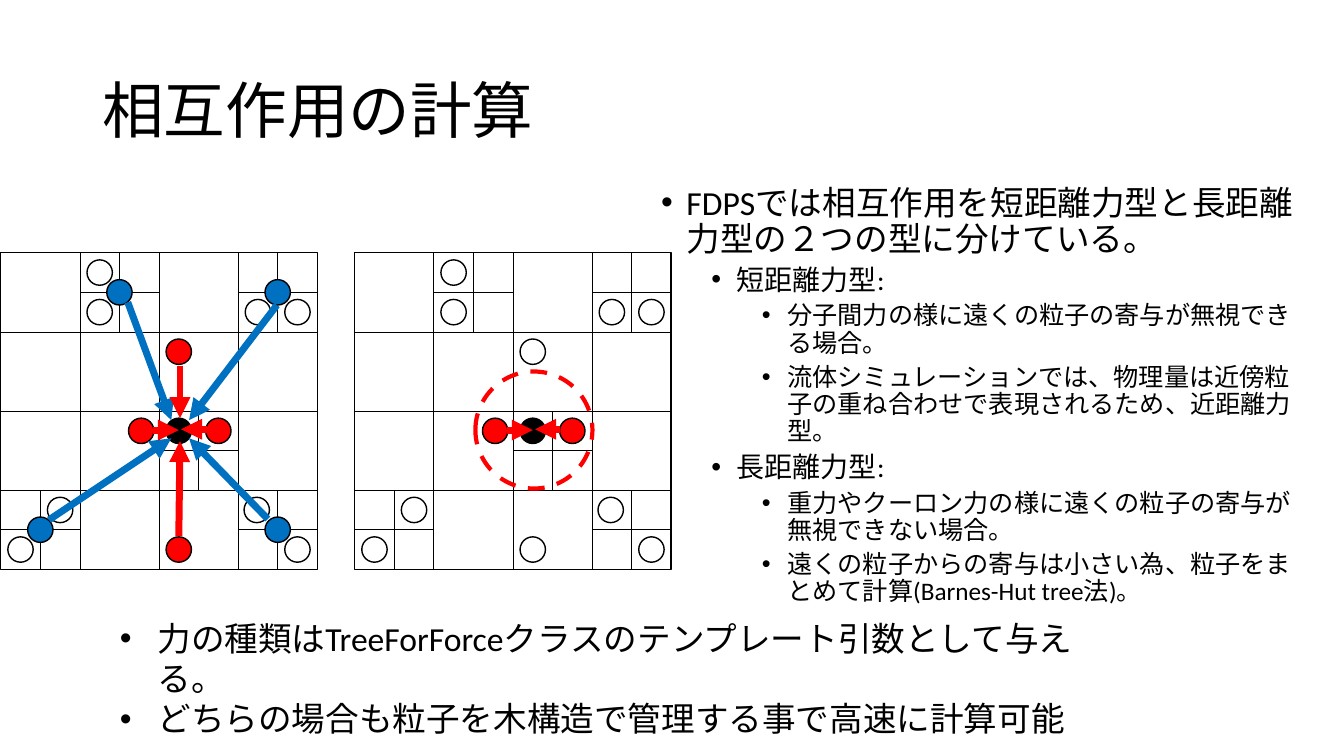
import pptx
import pptx.dml.color
import pptx.enum.dml
import pptx.enum.lang
import pptx.enum.shapes
import pptx.enum.text
import pptx.oxml
import pptx.oxml.ns
import pptx.util

Cm = pptx.util.Cm
Pt = pptx.util.Pt
RGBColor = pptx.dml.color.RGBColor
SHAPE = pptx.enum.shapes.MSO_SHAPE

BLACK = RGBColor(0, 0, 0)
WHITE = RGBColor(255, 255, 255)
RED = RGBColor(255, 0, 0)
BLUE = RGBColor(0, 0x70, 0xC0)

# Both cell trees are drawn on an 8 x 8 lattice; STEP is one lattice cell in cm.
STEP = 0.997
TREE_TOP = 6.37
LONG_RANGE_LEFT, SHORT_RANGE_LEFT = 0.02, 8.94
PARTICLE = 0.64

CELL_EDGES = [
    (0, 4, 8, 4), (4, 8, 4, 0), (6, 8, 6, 0), (2, 8, 2, 0), (0, 2, 8, 2), (0, 6, 8, 6),
    (2, 1, 4, 1), (6, 1, 8, 1), (0, 7, 2, 7), (4, 5, 6, 5), (6, 7, 8, 7),
    (1, 8, 1, 6), (7, 8, 7, 6), (5, 6, 5, 4), (3, 2, 3, 0), (7, 2, 7, 0),
]
TARGET = (4.5, 4.5)
NEIGHBOURS = [(5.5, 4.5), (3.55, 4.5)]
ABOVE_AND_BELOW = [(4.5, 2.5), (4.5, 7.5)]
FAR_PARTICLES = [(2.5, 0.5), (2.5, 1.5), (6.5, 1.5), (7.5, 1.5),
                 (1.5, 6.5), (0.5, 7.5), (6.47, 6.5), (7.5, 7.5)]
CELL_CENTRES = [(7, 7), (1, 7), (3, 1), (7, 1)]

CELL_FORCES = [(3.21, 1.25, 4.31, 4.23), (6.98, 1.32, 4.76, 4.23),
               (1.22, 6.75, 4.31, 4.69), (6.75, 6.73, 4.76, 4.69)]
VERTICAL_FORCES = [(4.53, 2.85, 4.53, 4.18), (4.5, 7.16, 4.53, 4.76)]
NEIGHBOUR_FORCES = [(5.2, 4.46, 4.56, 4.46), (3.85, 4.48, 4.5, 4.48)]

FORCE_TYPES = [
    (0, "FDPSでは相互作用を短距離力型と長距離力型の２つの型に分けている。"),
    (1, "短距離力型:"),
    (2, "分子間力の様に遠くの粒子の寄与が無視できる場合。"),
    (2, "流体シミュレーションでは、物理量は近傍粒子の重ね合わせで表現されるため、近距離力型。"),
    (1, "長距離力型:"),
    (2, "重力やクーロン力の様に遠くの粒子の寄与が無視できない場合。"),
    (2, "遠くの粒子からの寄与は小さい為、粒子をまとめて計算(Barnes-Hut tree法)。"),
]
USAGE_NOTES = [
    "力の種類はTreeForForceクラスのテンプレート引数として与える。",
    "どちらの場合も粒子を木構造で管理する事で高速に計算可能",
]


class SlideBuilder:
    font = "Calibri"

    def __init__(self, slide):
        self.slide = slide

    def text_frame(self, left, top, width, height):
        box = self.slide.shapes.add_textbox(Cm(left), Cm(top), Cm(width), Cm(height))
        box.text_frame.word_wrap = True
        return box.text_frame

    def paragraph(self, frame, text, size, line_spacing=1.0, before=0, indent=None, hang=0.64):
        """Fill the empty first paragraph or add one; an indent brings a bullet."""
        first = frame.paragraphs[0]
        para = frame.add_paragraph() if first.runs else first
        para.line_spacing = line_spacing
        para.space_before = Pt(before)
        run = para.add_run()
        run.text = text
        run.font.name = self.font
        run.font.size = Pt(size)
        run.font.color.rgb = BLACK
        run.font.language_id = pptx.enum.lang.MSO_LANGUAGE_ID.JAPANESE
        if indent is not None:
            properties = para._p.get_or_add_pPr()
            properties.set("marL", str(Cm(indent)))
            properties.set("indent", str(-Cm(hang)))
            for tag, key, value in (("a:buFont", "typeface", "Arial"), ("a:buChar", "char", "•")):
                bullet = pptx.oxml.parse_xml(f"<{tag} {pptx.oxml.ns.nsdecls('a')}/>")
                bullet.set(key, value)
                properties.append(bullet)

    def shape(self, kind, left, top, size, fill=None, line=BLACK, width=1, dash=None):
        shape = self.slide.shapes.add_shape(kind, Cm(left), Cm(top), Cm(size), Cm(size))
        shape.shadow.inherit = False
        if fill is None:
            shape.fill.background()
        else:
            shape.fill.solid()
            shape.fill.fore_color.rgb = fill
        shape.line.color.rgb = line
        shape.line.width = Pt(width)
        if dash:
            shape.line.dash_style = dash

    def circle(self, origin, centre, diameter=PARTICLE, **style):
        """Circle around a lattice point of the tree that starts at origin."""
        self.shape(SHAPE.OVAL, origin + centre[0] * STEP - diameter / 2,
                   TREE_TOP + centre[1] * STEP - diameter / 2, diameter, **style)

    def line(self, origin, ends, color=BLACK, width=0.5, arrow=False):
        x1, y1, x2, y2 = (Cm(start + value * STEP)
                          for start, value in zip((origin, TREE_TOP) * 2, ends))
        line = self.slide.shapes.add_connector(
            pptx.enum.shapes.MSO_CONNECTOR.STRAIGHT, x1, y1, x2, y2)
        line.line.color.rgb = color
        line.line.width = Pt(width)
        namespace = pptx.oxml.ns.nsdecls("a")
        if arrow:
            line.line._get_or_add_ln().append(
                pptx.oxml.parse_xml(f'<a:tailEnd {namespace} type="triangle"/>'))
        line._element.spPr.append(pptx.oxml.parse_xml(f"<a:effectLst {namespace}/>"))

    def tree(self, origin, background, outer_color):
        """Cell tree with its particles; outer_color fills those above and below."""
        self.shape(SHAPE.RECTANGLE, origin, TREE_TOP, 8 * STEP, fill=background)
        for edge in CELL_EDGES:
            self.line(origin, edge)
        for centres, color in ((FAR_PARTICLES, background), (ABOVE_AND_BELOW, outer_color),
                               (NEIGHBOURS, RED), ([TARGET], BLACK)):
            for centre in centres:
                self.circle(origin, centre, fill=color)

    def forces(self, origin, arrows, color):
        for arrow in arrows:
            self.line(origin, arrow, color, 5, arrow=True)


def main():
    deck = pptx.Presentation()
    deck.slide_width, deck.slide_height = Cm(33.87), Cm(19.05)
    builder = SlideBuilder(deck.slides.add_slide(deck.slide_layouts[6]))

    title = builder.text_frame(2.33, 1.01, 29.21, 3.68)
    title.vertical_anchor = pptx.enum.text.MSO_ANCHOR.MIDDLE
    builder.paragraph(title, "相互作用の計算", 44, 0.9)

    force_types = builder.text_frame(16.41, 4.57, 16.76, 12.93)
    for level, text in FORCE_TYPES:
        builder.paragraph(force_types, text, (24, 20, 18)[level], 0.9,
                          before=5 if level else 10, indent=0.64 + 1.27 * level)

    builder.tree(LONG_RANGE_LEFT, WHITE, RED)
    builder.tree(SHORT_RANGE_LEFT, None, None)
    for centre in CELL_CENTRES:
        builder.circle(LONG_RANGE_LEFT, centre, fill=BLUE)
    builder.forces(LONG_RANGE_LEFT, CELL_FORCES, BLUE)
    builder.forces(LONG_RANGE_LEFT, VERTICAL_FORCES + NEIGHBOUR_FORCES, RED)
    builder.forces(SHORT_RANGE_LEFT, NEIGHBOUR_FORCES, RED)
    builder.circle(SHORT_RANGE_LEFT, (4.53, 4.48), 2.95, line=RED, width=3,
                   dash=pptx.enum.dml.MSO_LINE.DASH)

    usage = builder.text_frame(2.77, 15.44, 25.02, 2.31)
    for note in USAGE_NOTES:
        builder.paragraph(usage, note, 24, indent=0.95, hang=0.95)

    deck.save("out.pptx")


if __name__ == "__main__":
    main()
